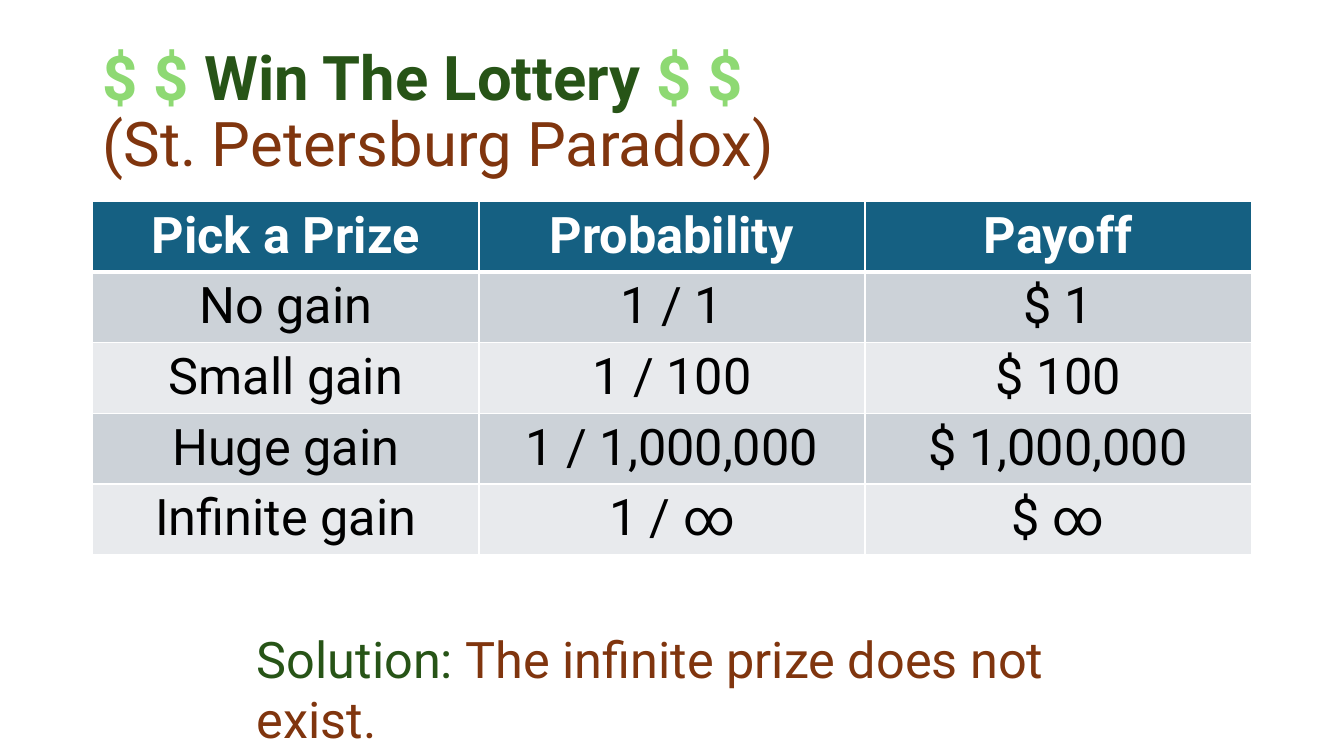
import pptx
import pptx.util
import pptx.dml.color
import pptx.enum.text
import pptx.oxml
import pptx.oxml.ns
from pptx.util import Inches

GREEN, LIGHT_GREEN, BROWN = "275417", "8ED973", "80350E"


def rgb(value):
    return pptx.dml.color.RGBColor.from_string(value)


def add_run(p, text, color, size, bold=False):
    r = p.add_run()
    r.text = text
    fmt = {"name": "Roboto", "size": pptx.util.Pt(size), "bold": bold}
    for key, value in fmt.items():
        setattr(r.font, key, value)
    r.font.color.rgb = rgb(color)


prs = pptx.Presentation()
prs.slide_width, prs.slide_height = Inches(13.33), Inches(7.5)
s = prs.slides.add_slide(prs.slide_layouts[6])

# Title
tf = s.shapes.add_textbox(Inches(0.92), Inches(0.4), Inches(11.5), Inches(1.45)).text_frame
tf.word_wrap = True
tf.vertical_anchor = pptx.enum.text.MSO_ANCHOR.MIDDLE
p = tf.paragraphs[0]
p.line_spacing = 0.9
add_run(p, "$ $ ", LIGHT_GREEN, 44, True)
add_run(p, "Win The Lottery ", GREEN, 44, True)
add_run(p, "$ $", LIGHT_GREEN, 44, True)
p.add_line_break()
add_run(p, "(St. Petersburg Paradox)", BROWN, 44)

# Prize table
prizes = [
    ("Pick a Prize", "Probability", "Payoff"),
    ("No gain", "1 / 1", "$ 1"),
    ("Small gain", "1 / 100", "$ 100"),
    ("Huge gain", "1 / 1,000,000", "$ 1,000,000"),
    ("Infinite gain", "1 / ∞", "$ ∞"),
]
table = s.shapes.add_table(len(prizes), 3, Inches(0.92), Inches(2),
                           Inches(11.5), Inches(3.5)).table
for column in table.columns:
    column.width = Inches(3.83)
for i, prize in enumerate(prizes):
    header = i == 0
    table.rows[i].height = Inches(0.41)
    for j, text in enumerate(prize):
        cell = table.cell(i, j)
        p = cell.text_frame.paragraphs[0]
        p.alignment = pptx.enum.text.PP_ALIGN.CENTER
        add_run(p, text, "FFFFFF" if header else "000000", 36, header)

        # White borders, thicker between header and body; they precede the fill
        tcPr = cell._tc.get_or_add_tcPr()
        for side in ("lnL", "lnR", "lnT", "lnB"):
            thick = (i, side) in ((0, "lnB"), (1, "lnT"))
            tcPr.append(pptx.oxml.parse_xml(
                f'<a:{side} {pptx.oxml.ns.nsdecls("a")} w="{38100 if thick else 12700}">'
                f'<a:solidFill><a:srgbClr val="FFFFFF"/></a:solidFill></a:{side}>'))
        cell.fill.solid()
        cell.fill.fore_color.rgb = rgb("156082" if header else ("E8EAED", "CCD2D8")[i % 2])

# Solution
tf = s.shapes.add_textbox(Inches(2.45), Inches(6.18), Inches(9.07), Inches(0.71)).text_frame
tf.word_wrap = True
tf.auto_size = pptx.enum.text.MSO_AUTO_SIZE.SHAPE_TO_FIT_TEXT
p = tf.paragraphs[0]
add_run(p, "Solution: ", GREEN, 36)
add_run(p, "The infinite prize does not exist.", BROWN, 36)

prs.save("out.pptx")
